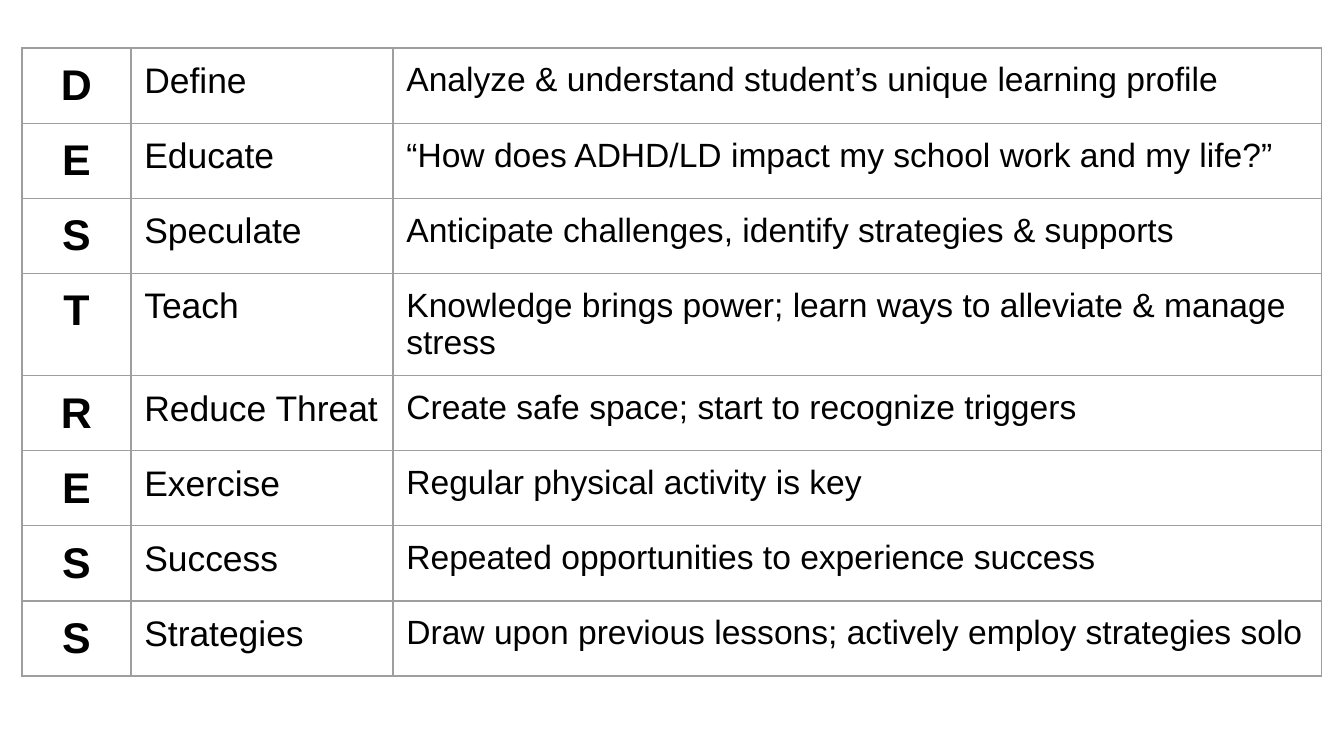
from pptx import Presentation
from pptx.dml.color import RGBColor
from pptx.enum.text import MSO_ANCHOR as ANCHOR, PP_ALIGN as ALIGN
from pptx.oxml import parse_xml
from pptx.oxml.ns import nsdecls
from pptx.util import Emu, Pt

EMU_PER_PX = 914400 / 134.4
WIDTH, HEIGHT = 1344, 756
ROW_HEIGHT = 75
FRAME_HEIGHT = 690

# width in px, text size, bold, alignment
COLUMNS = [
    (109, 23, True, ALIGN.CENTER),
    (262, 19, False, ALIGN.LEFT),
    (929, 18, False, ALIGN.LEFT),
]

STEPS = [
    ("Define", "Analyze & understand student’s unique learning profile"),
    ("Educate", "“How does ADHD/LD impact my school work and my life?”"),
    ("Speculate", "Anticipate challenges, identify strategies & supports"),
    ("Teach", "Knowledge brings power; learn ways to alleviate & manage stress"),
    ("Reduce Threat", "Create safe space; start to recognize triggers"),
    ("Exercise", "Regular physical activity is key"),
    ("Success", "Repeated opportunities to experience success"),
    ("Strategies", "Draw upon previous lessons; actively employ strategies solo"),
]


def px(n):
    return Emu(round(n * EMU_PER_PX))


def color(hex_code):
    return RGBColor.from_string(hex_code)


class Deck:
    """Holds the style and the current slide."""

    font = "Arial"
    ink = "000000"
    rule = "9E9E9E"
    rule_width = Pt(0.75)
    inset = Pt(7.2)

    def __init__(self):
        self.prs = Presentation()
        self.prs.slide_width, self.prs.slide_height = px(WIDTH), px(HEIGHT)
        self.slide = self.prs.slides.add_slide(self.prs.slide_layouts[6])

    def table(self, left, top, columns, rows):
        width = sum(column[0] for column in columns)
        frame = self.slide.shapes.add_table(
            len(rows), len(columns), px(left), px(top), px(width), px(ROW_HEIGHT * len(rows)))
        table = frame.table
        table.first_row = table.horz_banding = False
        for row in table.rows:
            row.height = px(ROW_HEIGHT)
        for c, (col_width, size, bold, align) in enumerate(columns):
            table.columns[c].width = px(col_width)
            for r, texts in enumerate(rows):
                self.cell(table.cell(r, c), texts[c], size, bold, align)
        frame.height = px(FRAME_HEIGHT)

    def cell(self, cell, text, size, bold, align):
        cell.margin_left = cell.margin_right = self.inset
        cell.margin_top = cell.margin_bottom = self.inset
        cell.vertical_anchor = ANCHOR.TOP
        self.borders(cell)
        cell.fill.background()
        p = cell.text_frame.paragraphs[0]
        p.text = text
        p.alignment = align
        p.font.name = self.font
        p.font.size = Pt(size)
        p.font.bold = bold
        p.font.color.rgb = color(self.ink)

    def borders(self, cell):
        tc_pr = cell._tc.get_or_add_tcPr()
        for side in "LRTB":
            tc_pr.append(parse_xml(
                f'<a:ln{side} {nsdecls("a")} w="{self.rule_width}"><a:solidFill>'
                f'<a:srgbClr val="{self.rule}"/></a:solidFill></a:ln{side}>'))


def main():
    deck = Deck()
    rows = [(name[0], name, meaning) for name, meaning in STEPS]
    deck.table(22, 48, COLUMNS, rows)
    deck.prs.save("out.pptx")


if __name__ == "__main__":
    main()
